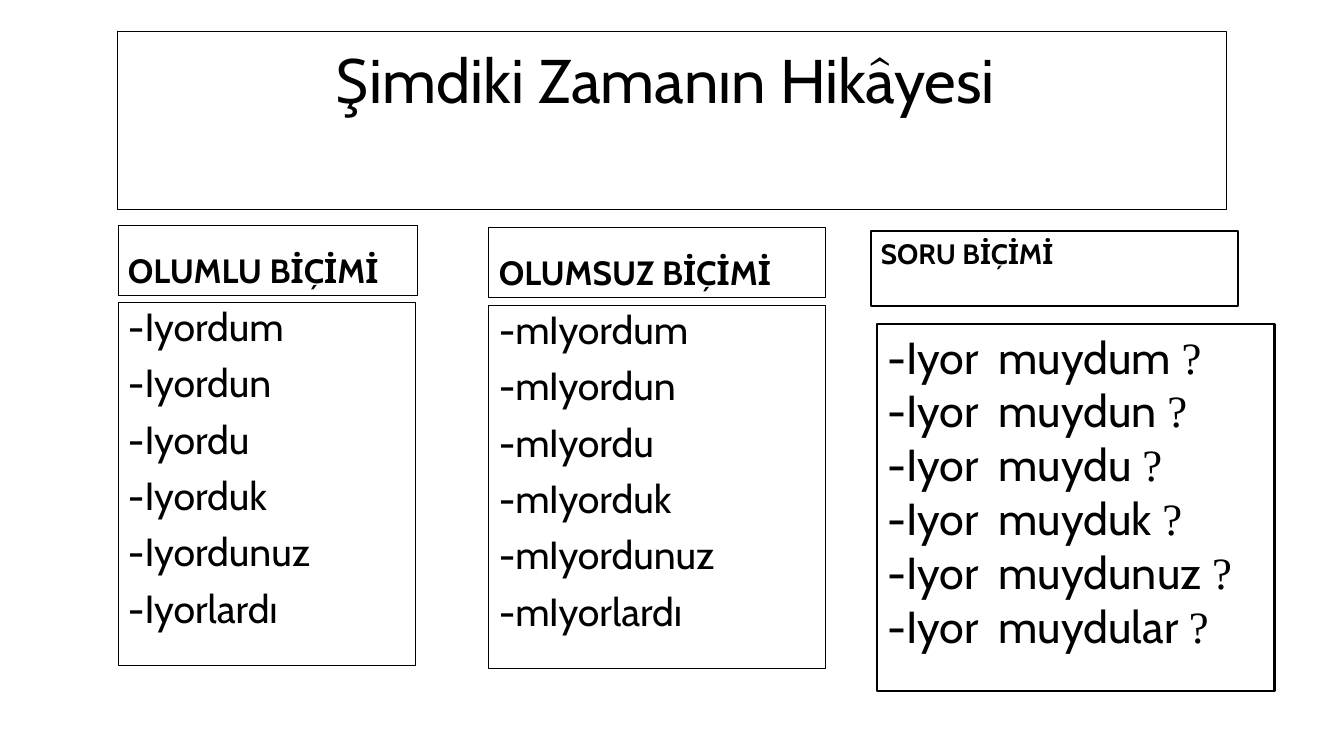
from pptx import Presentation
from pptx.dml.color import RGBColor
from pptx.enum import text as t
from pptx.util import Pt

# Content
TITLE = "Şimdiki Zamanın Hikâyesi \v"
ENDS = ["dum", "dun", "du", "duk", "dunuz"]
POS = ["-Iyor" + e for e in ENDS] + ["-Iyorlardı"]
NEG = ["-mIyor" + e for e in ENDS] + ["-mIyorlardı"]
ASK = [f"-Iyor  muy{e} " for e in ENDS + ["dular"]]

TOP, MID, LOW = t.MSO_ANCHOR.TOP, t.MSO_ANCHOR.MIDDLE, t.MSO_ANCHOR.BOTTOM
FONT, MARK = "Cabin", "Times New Roman"
INK, PAPER = "000000", "FFFFFF"

# Styles: size, bold, anchor, line spacing, space before, line width, fill
HEAD = (44, False, MID, 0.9, 0, 0.75, None)
CAP = (24, True, LOW, 0.9, 10, 0.75, None)
LIST = (28, False, TOP, 0.9, 10, 0.75, None)
ASKCAP = (20, True, TOP, 1.0, 0, 1.5, PAPER)
ASKLIST = (32, False, TOP, 1.0, 0, 1.5, PAPER)

# Boxes: left, top, width, height in points, style, lines, end mark
BOXES = [
    (84.3, 22.5, 792, 127, HEAD, [TITLE], ""),
    (84.3, 161.2, 214, 50.1, CAP, ["OLUMLU BİÇİMİ"], ""),
    (84.3, 216.2, 212.4, 259.2, LIST, POS, ""),
    (349.2, 162.6, 240.5, 50.1, CAP, ["OLUMSUZ BİÇİMİ"], ""),
    (349.2, 218.2, 240.5, 259.2, LIST, NEG, ""),
    (626.7, 231.7, 283.7, 262, ASKLIST, ASK, "?"),
    (622.1, 165.3, 262, 53.3, ASKCAP, ["SORU BİÇİMİ"], ""),
]


def color(code):
    return RGBColor.from_string(code)


def box(slide, left, top, width, height, style, lines, mark):
    size, bold, anchor, gap, before, edge, fill = style
    area = slide.shapes.add_textbox(Pt(left), Pt(top), Pt(width), Pt(height))
    if fill:
        area.fill.solid()
        area.fill.fore_color.rgb = color(fill)
    area.line.color.rgb = color(INK)
    area.line.width = Pt(edge)
    frame = area.text_frame
    frame.word_wrap = True
    frame.vertical_anchor = anchor
    for i, line in enumerate(lines):
        para = frame.add_paragraph() if i else frame.paragraphs[0]
        para.text = line
        para.alignment = t.PP_ALIGN.CENTER if style is HEAD else t.PP_ALIGN.LEFT
        para.line_spacing = gap
        para.space_before = Pt(before)
        font = para.font
        font.name, font.size, font.bold = FONT, Pt(size), bold
        font.color.rgb = color(INK)
        if mark:
            run = para.add_run()
            run.text = mark
            run.font.name = MARK


# Slide
deck = Presentation()
deck.slide_width, deck.slide_height = Pt(960), Pt(540)
slide = deck.slides.add_slide(deck.slide_layouts[6])
for item in BOXES:
    box(slide, *item)
deck.save("out.pptx")
